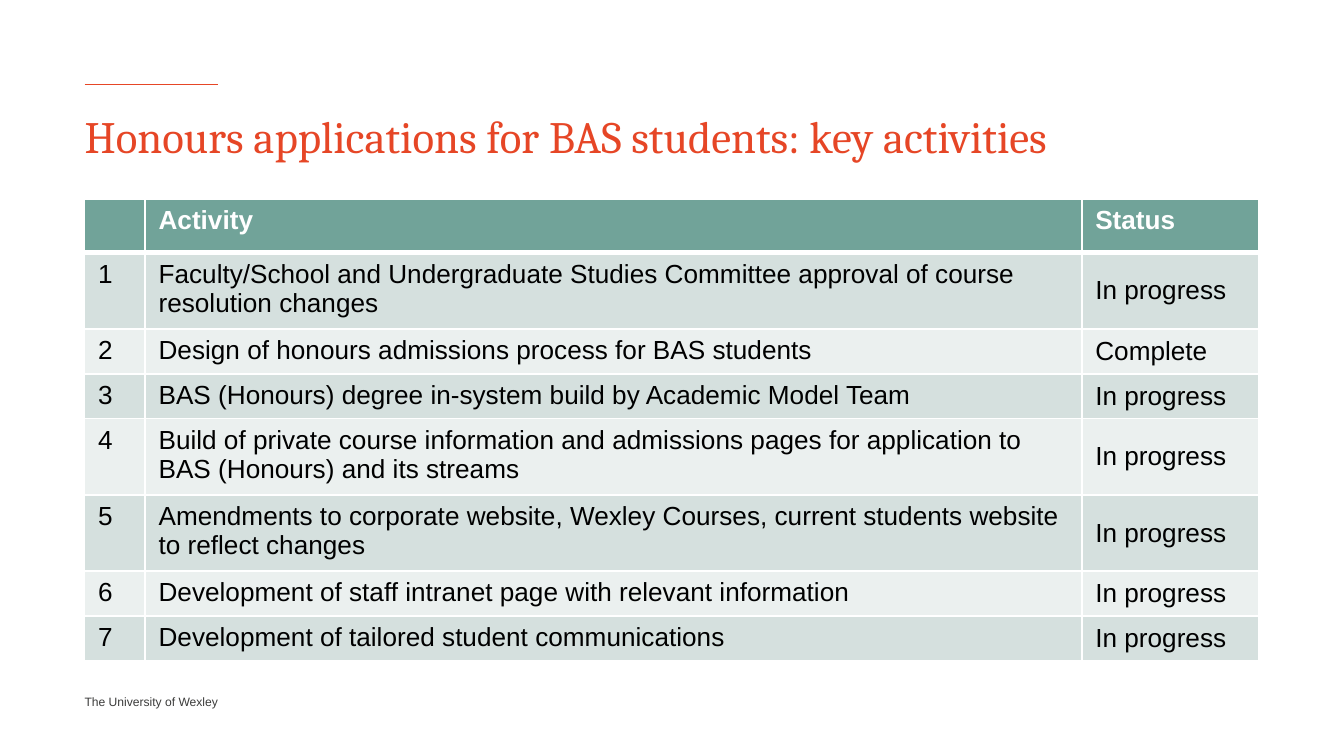
from pptx import Presentation
from pptx.dml.color import RGBColor
from pptx.enum.shapes import MSO_CONNECTOR
from pptx.enum.text import MSO_ANCHOR, PP_ALIGN
from pptx.oxml.ns import qn
from pptx.util import Inches, Pt
from lxml import etree

COLORS = {
    "accent": "E64626",
    "header": "71A399",
    "odd": "D5E0DE",
    "even": "EBF0EF",
    "footer": "3C3C3B",
    "white": "FFFFFF",
    "black": "000000",
}


def add_run(p, text, font, size, color, bold=False):
    r = p.add_run()
    r.text = text
    r.font.name = font
    r.font.size = Pt(size)
    r.font.bold = bold
    r.font.color.rgb = RGBColor.from_string(COLORS[color])


def add_border(cell, side, width, color):
    ln = etree.Element(qn(f"a:ln{side}"), w=str(Pt(width)))
    fill = etree.SubElement(ln, qn("a:solidFill"))
    etree.SubElement(fill, qn("a:srgbClr"), val=COLORS[color])
    cell._tc.get_or_add_tcPr().insert("LRTB".index(side), ln)


prs = Presentation()
prs.slide_width = Inches(10)
prs.slide_height = prs.slide_width * 9 // 16
s = prs.slides.add_slide(prs.slide_layouts[5])

title = s.shapes.title
title.left, title.top = Inches(0.63), Inches(0.81)
title.width, title.height = Inches(8.74), Inches(0.4)
footer = s.shapes.add_textbox(Inches(0.63), Inches(5.17), Inches(1.03), Inches(0.13))
for sp in (title, footer):
    tf = sp.text_frame
    tf.word_wrap = True
    tf.vertical_anchor = MSO_ANCHOR.TOP
    tf.margin_left = tf.margin_right = tf.margin_top = tf.margin_bottom = 0
    tf.paragraphs[0].alignment = PP_ALIGN.LEFT

p = title.text_frame.paragraphs[0]
add_run(p, "Honours applications for BAS students: key activities", "Cambria", 24, "accent")
p = footer.text_frame.paragraphs[0]
p.space_before = Pt(0.3)
add_run(p, "The University of Wexley", "Arial", 6.5, "footer")

rule = s.shapes.add_connector(
    MSO_CONNECTOR.STRAIGHT, Inches(0.63), Inches(0.63), Inches(1.62), Inches(0.63)
)
rule.line.color.rgb = RGBColor.from_string(COLORS["accent"])
rule.line.width = Pt(0.75)
etree.SubElement(rule._element.spPr, qn("a:effectLst"))

activities = [
    ("Faculty/School and Undergraduate Studies Committee approval of course resolution changes", "In progress"),
    ("Design of honours admissions process for BAS students", "Complete"),
    ("BAS (Honours) degree in-system build by Academic Model Team", "In progress"),
    ("Build of private course information and admissions pages for application to BAS (Honours) and its streams", "In progress"),
    ("Amendments to corporate website, Wexley Courses, current students website to reflect changes", "In progress"),
    ("Development of staff intranet page with relevant information", "In progress"),
    ("Development of tailored student communications", "In progress"),
]
rows = [("", "Activity", "Status")]
rows += [(str(n), *activity) for n, activity in enumerate(activities, 1)]
widths = [0.45, 6.97, 1.32]

frame = s.shapes.add_table(
    len(rows), len(widths), Inches(0.63), Inches(1.48), Inches(sum(widths)), Inches(3.44)
)
table = frame.table
for col, width in zip(table.columns, widths):
    col.width = Inches(width)

for i, texts in enumerate(rows):
    header = i == 0
    table.rows[i].height = Inches(0.4 if header else 0.14)
    fill = "header" if header else "odd" if i % 2 else "even"
    for j, text in enumerate(texts):
        cell = table.cell(i, j)
        cell.fill.solid()
        cell.fill.fore_color.rgb = RGBColor.from_string(COLORS[fill])
        if header:
            for side, width in zip("LRTB", (1, 1, 1, 3)):
                add_border(cell, side, width, "white")
        elif j == 2:
            cell.vertical_anchor = MSO_ANCHOR.MIDDLE
        if text:
            p = cell.text_frame.paragraphs[0]
            add_run(p, text, "Arial", 14, "white" if header else "black", header)
frame.height = Inches(3.44)

prs.save("out.pptx")
